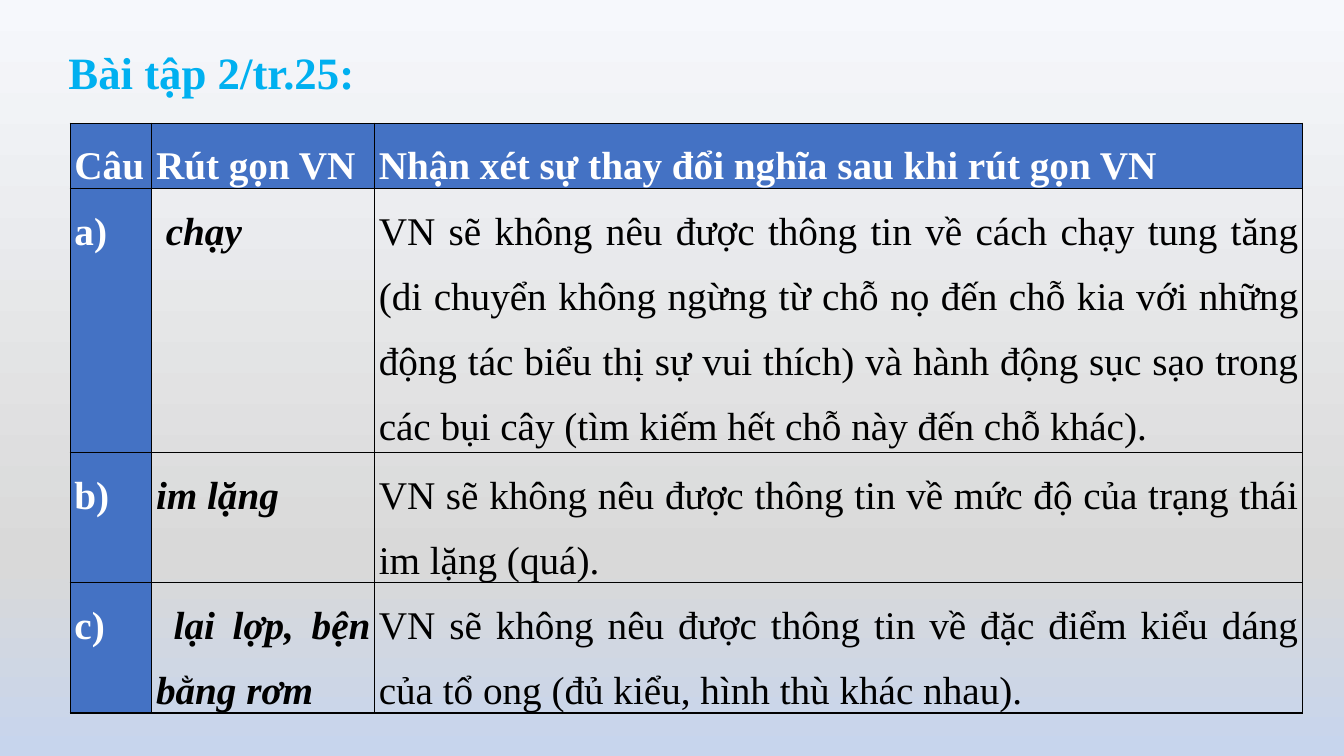
from copy import deepcopy
from lxml.etree import SubElement
from pptx import Presentation
from pptx.dml.color import RGBColor as RGB
from pptx.enum.text import MSO_AUTO_SIZE as AUTO, PP_ALIGN as ALIGN
from pptx.oxml.ns import qn
from pptx.util import Pt

COLORS = {
    "bg_top": "F6F8FC", "bg_mid": "D9D9D9", "bg_low": "C7D5ED",
    "title": "00B0F0", "header": "4472C4", "white": "FFFFFF", "black": "000000",
}
COL_WIDTHS = [58.3, 159.1, 663.1]
ROW_HEIGHTS = [46.8, 188.6, 82.8, 92.2]
ROWS = [
    ["Câu", "Rút gọn VN", "Nhận xét sự thay đổi nghĩa sau khi rút gọn VN"],
    ["a)", " chạy",
     "VN sẽ không nêu được thông tin về cách chạy tung tăng (di chuyển không ngừng "
     "từ chỗ nọ đến chỗ kia với những động tác biểu thị sự vui thích) và hành động "
     "sục sạo trong các bụi cây (tìm kiếm hết chỗ này đến chỗ khác)."],
    ["b)", "im lặng",
     "VN sẽ không nêu được thông tin về mức độ của trạng thái im lặng (quá)."],
    ["c)", " lại lợp, bện bằng rơm",
     "VN sẽ không nêu được thông tin về đặc điểm kiểu dáng của tổ ong "
     "(đủ kiểu, hình thù khác nhau)."],
]


def write(tf, text, size, color, bold=True, italic=False):
    p = tf.paragraphs[0]
    p.add_run().text = text
    p.alignment = ALIGN.JUSTIFY
    p.line_spacing = 1.5
    p.font.name = "Times New Roman"
    p.font.size = Pt(size)
    p.font.bold = bold
    p.font.italic = italic
    p.font.color.rgb = RGB.from_string(COLORS[color])


def add_borders(cell):
    tcPr = cell._tc.get_or_add_tcPr()
    for side in ("lnL", "lnR", "lnT", "lnB"):
        ln = SubElement(tcPr, qn(f"a:{side}"), w=str(Pt(1)))
        fill = SubElement(ln, qn("a:solidFill"))
        SubElement(fill, qn("a:srgbClr"), val=COLORS["black"])


prs = Presentation()
prs.slide_width, prs.slide_height = Pt(960), Pt(540)
s = prs.slides.add_slide(prs.slide_layouts[6])

bg = s.background.fill
bg.gradient()
bg.gradient_angle = 270
stops = s.element.find(f".//{qn('a:gsLst')}")
stops.insert(1, deepcopy(stops[0]))
for stop, (name, pos) in zip(bg.gradient_stops, [("bg_top", 0), ("bg_mid", 0.74), ("bg_low", 1)]):
    stop.color.rgb = RGB.from_string(COLORS[name])
    stop.position = pos

table = s.shapes.add_table(len(ROWS), len(COL_WIDTHS), Pt(50.2), Pt(88),
                           Pt(sum(COL_WIDTHS)), Pt(sum(ROW_HEIGHTS))).table
table.first_row = table.horz_banding = False
for col, width in zip(table.columns, COL_WIDTHS):
    col.width = Pt(width)
for row, height in zip(table.rows, ROW_HEIGHTS):
    row.height = Pt(height)

for i, texts in enumerate(ROWS):
    for j, text in enumerate(texts):
        cell = table.cell(i, j)
        cell.margin_left = cell.margin_right = Pt(3)
        cell.margin_top = cell.margin_bottom = 0
        add_borders(cell)
        header = i == 0 or j == 0
        if header:
            cell.fill.solid()
            cell.fill.fore_color.rgb = RGB.from_string(COLORS["header"])
        else:
            cell.fill.background()
        write(cell.text_frame, text, 28, "white" if header else "black",
              bold=header or j == 1, italic=not header and j == 1)

title = s.shapes.add_textbox(Pt(41.8), Pt(9.4), Pt(223.9), Pt(58.3))
title.text_frame.word_wrap = True
title.text_frame.auto_size = AUTO.SHAPE_TO_FIT_TEXT
write(title.text_frame, "Bài tập 2/tr.25:", 32, "title")

prs.save("out.pptx")
